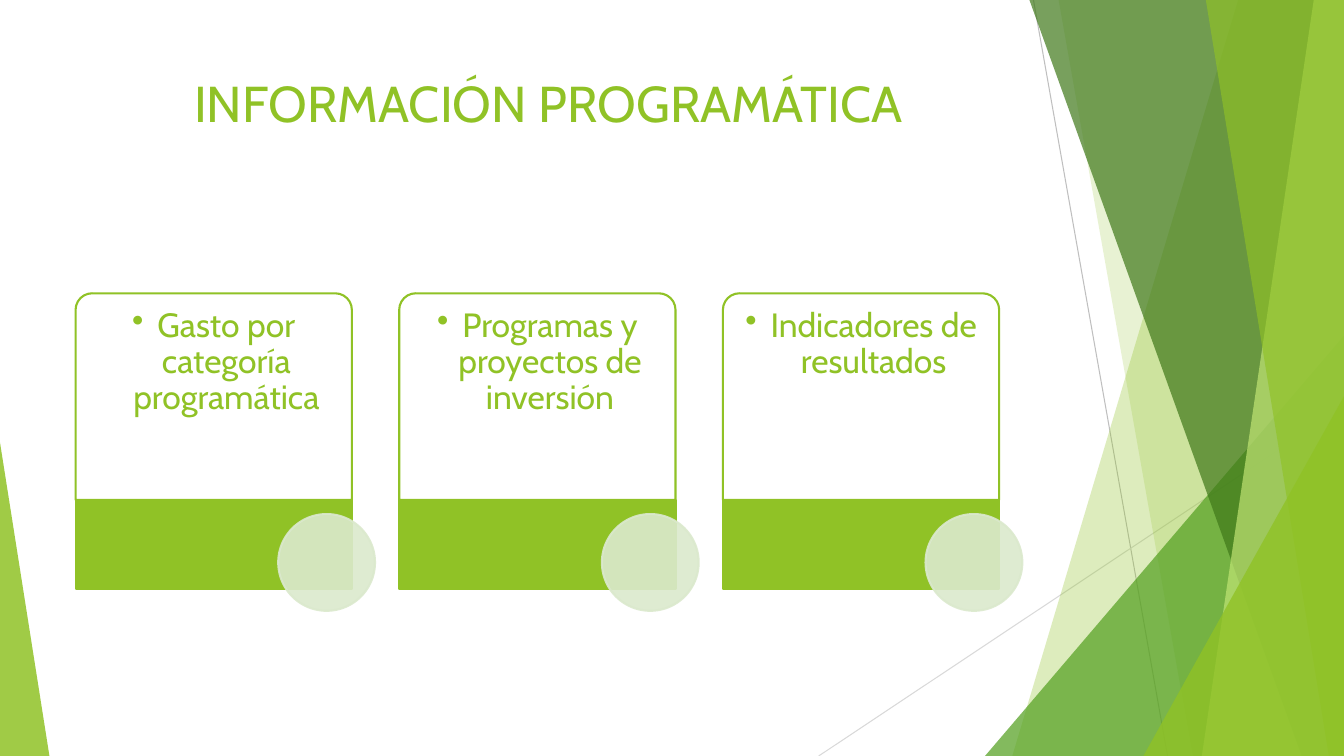
from dataclasses import dataclass

from lxml.etree import SubElement
from pptx import Presentation
from pptx.dml.color import RGBColor
from pptx.enum.shapes import MSO_CONNECTOR, MSO_SHAPE
from pptx.enum.text import MSO_ANCHOR, PP_ALIGN
from pptx.oxml.ns import qn
from pptx.util import Inches, Pt


@dataclass(frozen=True)
class Theme:
    font: str = "Cabin"
    title_size: int = 36
    card_size: int = 24
    outline: float = 1.5
    hairline: float = 0.75
    white: str = "FFFFFF"
    green: str = "90C226"
    leaf: str = "54A021"
    forest: str = "3F7819"
    lime: str = "C0E474"
    pale: str = "DBE9CD"
    gray: str = "BFBFBF"
    light_gray: str = "D9D9D9"


THEME = Theme()
CARD_TEXTS = [
    "Gasto por categoría programática",
    "Programas y proyectos de inversión",
    "Indicadores de resultados",
]


def paint(fill, color, opacity=100):
    fill.solid()
    fill.fore_color.rgb = RGBColor.from_string(color)
    if opacity < 100:
        color_element = fill._xPr.find(qn("a:solidFill"))[0]
        SubElement(color_element, qn("a:alpha"), val=str(opacity * 1000))


def style_shape(shape, color, opacity=100, line=None, line_opacity=100):
    shape.shadow.inherit = False
    paint(shape.fill, color, opacity)
    if line:
        shape.line.width = Pt(THEME.outline)
        paint(shape.line.fill, line, line_opacity)
    else:
        shape.line.fill.background()


def add_preset(page, kind, box, adjustments=()):
    shape = page.shapes.add_shape(kind, *(Inches(length) for length in box))
    for index, value in enumerate(adjustments):
        shape.adjustments[index] = value
    return shape


def add_span(para, text, size):
    span = para.add_run()
    span.text = text
    span.font.name = THEME.font
    span.font.size = Pt(size)
    span.font.color.rgb = RGBColor.from_string(THEME.green)


def add_hairline(page, start, end, color):
    line = page.shapes.add_connector(
        MSO_CONNECTOR.STRAIGHT, *(Inches(value) for value in start + end))
    line.line.width = Pt(THEME.hairline)
    line.line.color.rgb = RGBColor.from_string(color)
    SubElement(line._element.spPr, qn("a:effectLst"))


def add_backdrop(page, box):
    left, top, width, height = box
    right, bottom = left + width, top + height

    def ray(upper, lower, color, opacity):
        """Fill from a slanted left edge to the right side of the page."""
        points = [(upper, top), (right, top), (right, bottom), (lower, bottom)]
        corners = [(Inches(x), Inches(y)) for x, y in points]
        builder = page.shapes.build_freeform(*corners[0], scale=1.0)
        builder.add_line_segments(corners[1:], close=True)
        style_shape(builder.convert_to_shape(), color, opacity)

    def corner(x, across, up, apex, color, opacity):
        """Triangle standing on the bottom edge of the page."""
        shape = add_preset(page, MSO_SHAPE.ISOSCELES_TRIANGLE,
                           (x, bottom - up, across, up), [apex])
        style_shape(shape, color, opacity)

    add_hairline(page, (left + 10.25, top), (left + 11.58, bottom), THEME.gray)
    add_hairline(page, (right, top + 4.03), (left + 8.12, bottom), THEME.light_gray)
    ray(left + 12.28, left + 10.04, THEME.green, 30)
    ray(left + 10.5, left + 11.83, THEME.green, 20)
    corner(right - 3.56, 3.56, 4.17, 1, THEME.leaf, 72)
    ray(left + 10.21, left + 12.91, THEME.forest, 70)
    ray(left + 13.03, left + 11.92, THEME.lime, 70)
    ray(left + 11.96, left + 13.18, THEME.green, 65)
    corner(right - 1.99, 1.99, 3.57, 1, THEME.green, 80)
    corner(left, 0.49, 3.11, 0, THEME.green, 85)


def add_title(page, box, text):
    title = page.shapes.title
    title.left, title.top, title.width, title.height = (Inches(v) for v in box)
    frame = title.text_frame
    frame.word_wrap = True
    frame.vertical_anchor = MSO_ANCHOR.TOP
    para = frame.paragraphs[0]
    para.alignment = PP_ALIGN.CENTER
    add_span(para, text, THEME.title_size)


def add_card_text(page, box, text):
    frame = page.shapes.add_textbox(*(Inches(v) for v in box)).text_frame
    frame.word_wrap = True
    frame.vertical_anchor = MSO_ANCHOR.TOP
    frame.margin_left = frame.margin_right = frame.margin_bottom = Inches(0.03)
    frame.margin_top = Inches(0.1)
    para = frame.paragraphs[0]
    para.level = 1
    para.alignment = PP_ALIGN.CENTER
    para.line_spacing = 0.9
    properties = para._p.get_or_add_pPr()
    properties.set("marL", str(Inches(0.25)))
    properties.set("indent", str(Inches(-0.25)))
    SubElement(properties, qn("a:buChar"), char="•")
    add_span(para, text, THEME.card_size)


def add_card(page, box, text):
    left, top, width, height = box
    band_height, circle = 0.88, 0.96
    panel_height = height - band_height
    band_top = top + panel_height

    # Panel with its bullet
    panel = add_preset(page, MSO_SHAPE.ROUND_2_SAME_RECTANGLE,
                       (left, top, width, panel_height), [0.08, 0])
    style_shape(panel, THEME.white, 90, THEME.green)
    inset = 0.05
    add_card_text(page, (left + inset, top + inset, width - 2 * inset,
                         panel_height - inset), text)

    # Green band and the circle over its corner
    band = add_preset(page, MSO_SHAPE.RECTANGLE, (left, band_top, width, band_height))
    style_shape(band, THEME.green, line=THEME.green)
    disc = add_preset(page, MSO_SHAPE.OVAL,
                      (left + width - 0.73, band_top + 0.14, circle, circle))
    style_shape(disc, THEME.pale, 90, THEME.pale, 90)


def add_cards(page, box, texts):
    left, top, width, height = box
    gap = 0.47
    card_width = (width - gap * (len(texts) - 1)) / len(texts)
    for index, text in enumerate(texts):
        add_card(page, (left + index * (card_width + gap), top, card_width, height), text)


def main():
    deck = Presentation()
    deck.slide_width, deck.slide_height = Inches(13.33), Inches(7.5)
    page = deck.slides.add_slide(deck.slide_layouts[5])
    add_backdrop(page, (0, 0, 13.33, 7.5))
    add_title(page, (0.74, 0.67, 9.4, 1.44), "INFORMACIÓN PROGRAMÁTICA")
    add_cards(page, (0.75, 2.91, 9.16, 2.93), CARD_TEXTS)
    deck.save("out.pptx")


if __name__ == "__main__":
    main()
